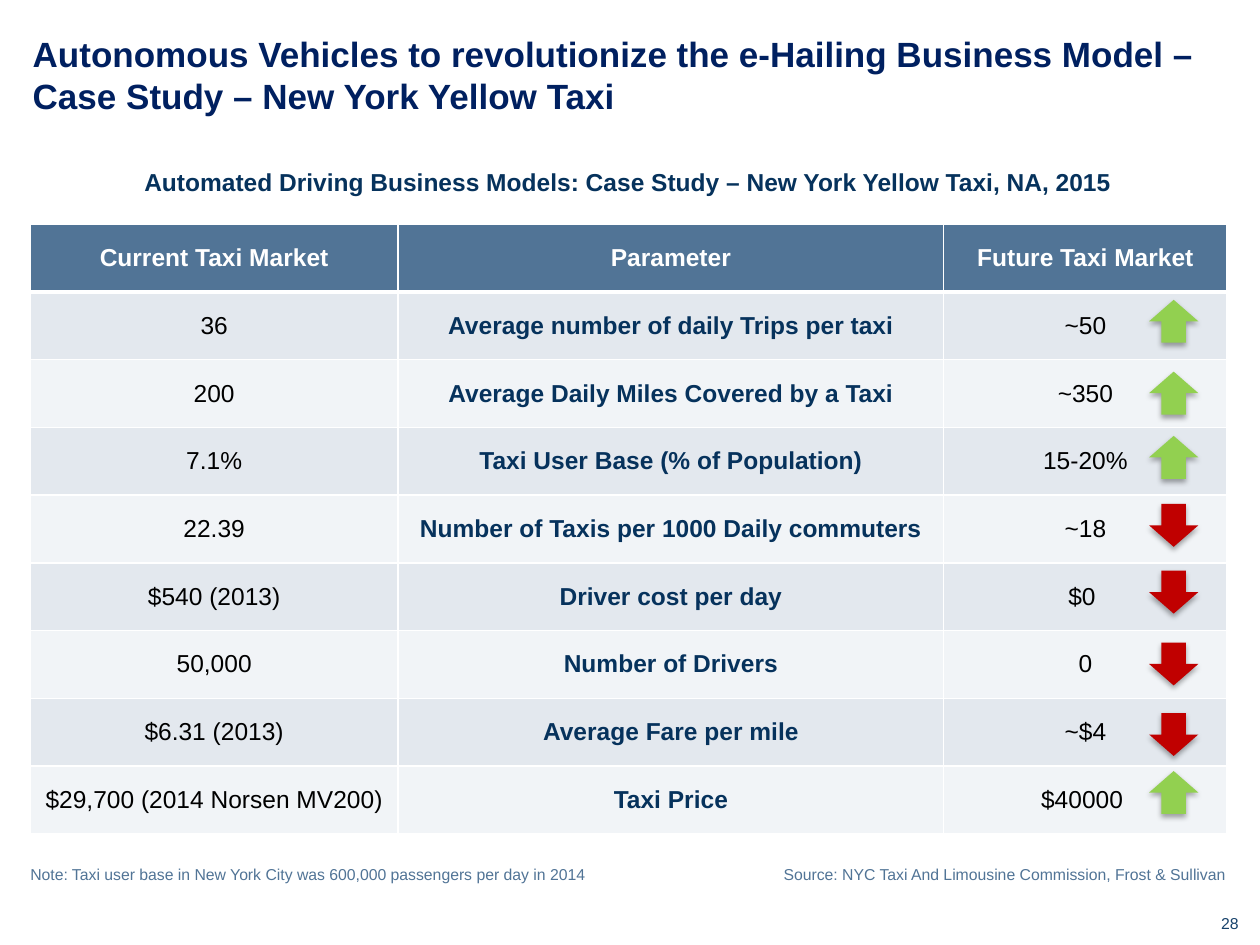
import pptx
import pptx.util
from pptx.dml.color import RGBColor
from pptx.enum.shapes import MSO_SHAPE
from pptx.enum.text import MSO_ANCHOR, PP_ALIGN
from pptx.oxml import parse_xml
from pptx.oxml.ns import nsdecls
from pptx.util import Inches

FONT = "Arial"
WHITE = RGBColor(0xFF, 0xFF, 0xFF)
BLACK = RGBColor(0x00, 0x00, 0x00)
TITLE_NAVY = RGBColor(0x00, 0x20, 0x60)
NAVY = RGBColor(0x06, 0x32, 0x5C)
PAGE_BLUE = RGBColor(0x17, 0x42, 0x6B)
STEEL = RGBColor(0x51, 0x74, 0x96)
BAND_DARK = RGBColor(0xE3, 0xE8, 0xEE)
BAND_LIGHT = RGBColor(0xF1, 0xF4, 0xF7)
GREEN = RGBColor(0x92, 0xD0, 0x50)
RED = RGBColor(0xC0, 0x00, 0x00)

HEADER = ("Current Taxi Market", "Parameter", "Future Taxi Market")
ROWS = [
    ("36", "Average number of daily Trips per taxi", "~50"),
    ("200", "Average Daily Miles Covered by a Taxi", "~350"),
    ("7.1%", "Taxi User Base (% of Population)", "15-20%"),
    ("22.39", "Number of Taxis per 1000 Daily commuters", "~18"),
    ("$540 (2013)", "Driver cost per day", "$0 "),
    ("50,000", "Number of Drivers", "0"),
    ("$6.31 (2013)", "Average Fare per mile", "~$4"),
    ("$29,700 (2014 Norsen MV200)", "Taxi Price", "$40000 "),
]
COLUMN_WIDTHS = (2.92, 4.33, 2.25)
TABLE_HEIGHT = 4.84

# Top of each trend arrow and whether the value rises
TRENDS = [(2.38, True), (2.95, True), (3.46, True), (4.0, False),
          (4.53, False), (5.1, False), (5.66, False), (6.12, True)]


def format_text(tf, size, color, bold=False, align=PP_ALIGN.LEFT):
    p = tf.paragraphs[0]
    p.alignment = align
    for r in p.runs:
        r.font.name = FONT
        r.font.size = pptx.util.Pt(size)
        r.font.bold = bold
        r.font.color.rgb = color


def add_text(s, text, box, size, color, bold=False, align=PP_ALIGN.LEFT,
             anchor=MSO_ANCHOR.MIDDLE, wrap=True):
    tf = s.shapes.add_textbox(*map(Inches, box)).text_frame
    tf.margin_left = tf.margin_top = tf.margin_right = tf.margin_bottom = 0
    tf.word_wrap = wrap
    tf.vertical_anchor = anchor
    tf.text = text
    format_text(tf, size, color, bold, align)


def add_borders(cell, bottom_width):
    tc_pr = cell._tc.get_or_add_tcPr()
    for side, width in (("L", 1), ("R", 1), ("T", 1), ("B", bottom_width)):
        tc_pr.append(parse_xml(
            f'<a:ln{side} {nsdecls("a")} w="{pptx.util.Pt(width)}"><a:solidFill>'
            f'<a:srgbClr val="{WHITE}"/></a:solidFill></a:ln{side}>'))


def fill_cell(cell, text, fill, color, bold, bottom_width=1):
    add_borders(cell, bottom_width)
    cell.fill.solid()
    cell.fill.fore_color.rgb = fill
    cell.vertical_anchor = MSO_ANCHOR.MIDDLE
    cell.text_frame.text = text
    format_text(cell.text_frame, 14, color, bold, PP_ALIGN.CENTER)


def add_market_table(s):
    row_count = len(ROWS) + 1
    table = s.shapes.add_table(
        row_count, len(HEADER), Inches(0.24), Inches(1.78),
        Inches(sum(COLUMN_WIDTHS)), Inches(TABLE_HEIGHT)).table
    for column, width in zip(table.columns, COLUMN_WIDTHS):
        column.width = Inches(width)
    for row in table.rows:
        row.height = Inches(TABLE_HEIGHT / row_count)
    for j, text in enumerate(HEADER):
        fill_cell(table.cell(0, j), text, STEEL, WHITE, True, bottom_width=3)
    for i, values in enumerate(ROWS, start=1):
        band = BAND_DARK if i % 2 else BAND_LIGHT
        for j, text in enumerate(values):
            is_parameter = j == 1
            fill_cell(table.cell(i, j), text, band,
                      NAVY if is_parameter else BLACK, is_parameter)


def add_trend_arrow(s, top, rising):
    kind = MSO_SHAPE.UP_ARROW if rising else MSO_SHAPE.DOWN_ARROW
    arrow = s.shapes.add_shape(kind, Inches(9.12), Inches(top),
                               Inches(0.39), Inches(0.34))
    arrow.fill.solid()
    arrow.fill.fore_color.rgb = GREEN if rising else RED
    arrow.line.fill.background()
    # Soft shadow below the arrow
    arrow._element.spPr.append(parse_xml(
        f'<a:effectLst {nsdecls("a")}><a:outerShdw blurRad="{pptx.util.Pt(3.1)}" '
        f'dist="{pptx.util.Pt(1.8)}" dir="5400000" rotWithShape="0">'
        '<a:srgbClr val="000000"><a:alpha val="35000"/></a:srgbClr>'
        '</a:outerShdw></a:effectLst>'))


def main():
    prs = pptx.Presentation()
    prs.slide_width, prs.slide_height = Inches(10), Inches(7.5)
    s = prs.slides.add_slide(prs.slide_layouts[6])

    # Page number
    add_text(s, "28", (7.75, 7.25, 2.08, 0.17), 9, PAGE_BLUE,
             align=PP_ALIGN.RIGHT, anchor=MSO_ANCHOR.TOP)

    # Table and trend arrows
    add_market_table(s)
    for top, rising in TRENDS:
        add_trend_arrow(s, top, rising)

    # Source and note
    add_text(s, "Source: NYC Taxi And Limousine Commission, Frost & Sullivan ",
             (6.16, 6.86, 3.6, 0.15), 9, STEEL, align=PP_ALIGN.RIGHT, wrap=False)
    add_text(s, "Note: Taxi user base in New York City was 600,000 passengers "
             "per day in 2014", (0.24, 6.86, 4.51, 0.15), 9, STEEL, wrap=False)

    # Title and table heading
    add_text(s, "Autonomous Vehicles to revolutionize the e-Hailing Business "
             "Model – Case Study – New York Yellow Taxi",
             (0.26, 0.17, 9.5, 0.84), 20, TITLE_NAVY, bold=True)
    add_text(s, "Automated Driving Business Models: Case Study – New York "
             "Yellow Taxi, NA, 2015", (0.42, 1.28, 9.13, 0.32), 14, NAVY,
             bold=True, align=PP_ALIGN.CENTER)

    prs.save("out.pptx")


if __name__ == "__main__":
    main()
